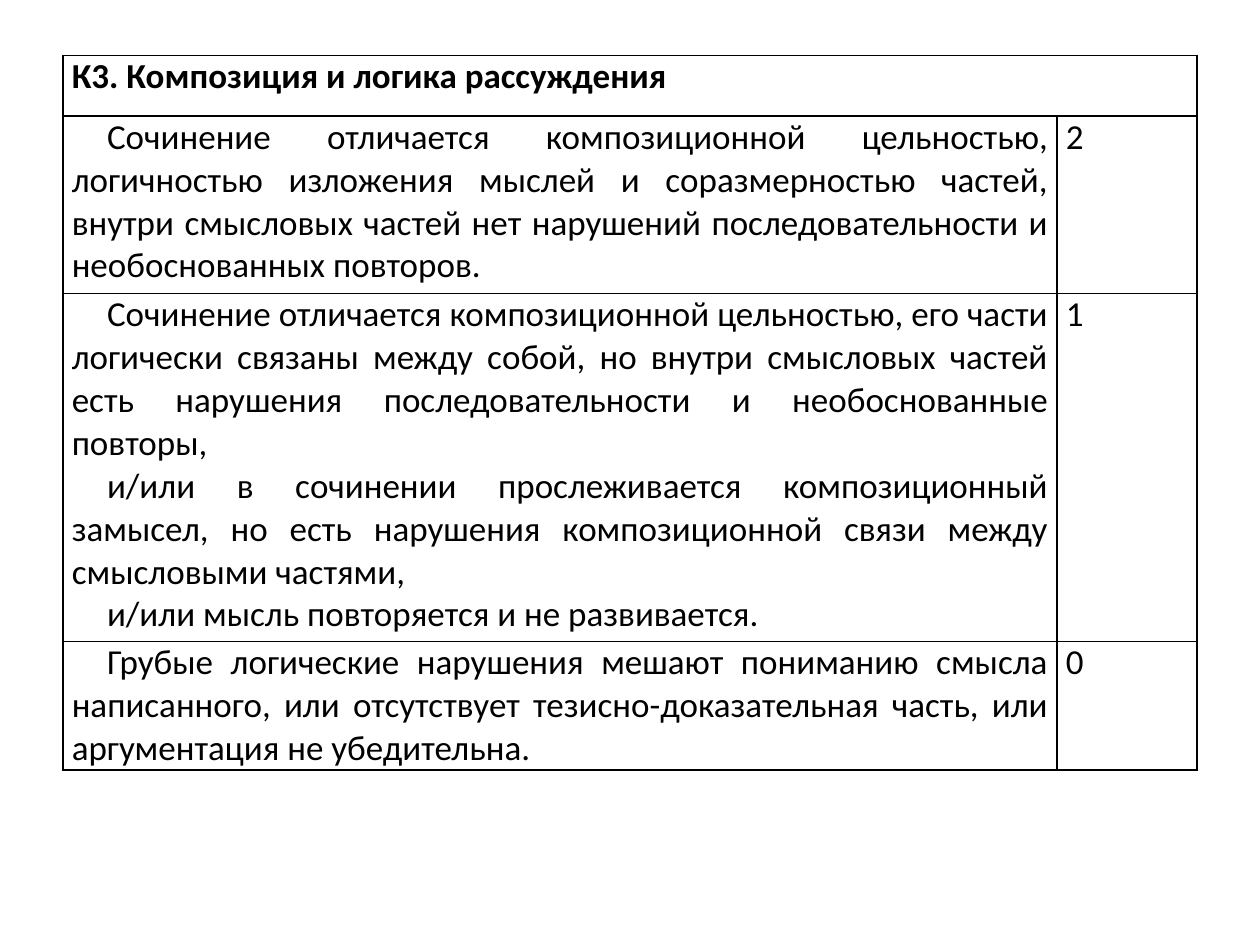
from pptx import Presentation, oxml
from pptx import util as u
from pptx.dml import color
from pptx.enum import text
from pptx.oxml import ns

TITLE = "К3. Композиция и логика рассуждения"
CRITERIA = [
    (["Сочинение отличается композиционной цельностью, логичностью изложения мыслей "
      "и соразмерностью частей, внутри смысловых частей нет нарушений "
      "последовательности и необоснованных повторов."], "2"),
    (["Сочинение отличается композиционной цельностью, его части логически связаны "
      "между собой, но внутри смысловых частей есть нарушения последовательности "
      "и необоснованные повторы,",
      "и/или в сочинении прослеживается композиционный замысел, но есть нарушения "
      "композиционной связи между смысловыми частями,",
      "и/или мысль повторяется и не развивается."], "1"),
    (["Грубые логические нарушения мешают пониманию смысла написанного, или "
      "отсутствует тезисно-доказательная часть, или аргументация не убедительна."], "0"),
]
LEFT, TOP = 0.5, 0.44
COLS = [7.89, 1.11]
ROWS = [0.48, 1.41, 2.76, 1.02]
INDENT = 0.28
BLACK = "000000"
FONT = {"name": "Calibri", "size": u.Pt(20)}
MARGINS = {"margin_left": u.Inches(0.07), "margin_right": u.Inches(0.07),
           "margin_top": 0, "margin_bottom": 0}


def rgb(value):
    """Return the colour for a hex string."""
    return color.RGBColor.from_string(value)


def set_format(obj, values):
    """Set each attribute in values on obj."""
    for name, value in values.items():
        setattr(obj, name, value)


def add_borders(cell):
    """Draw a one-point line on every side of a cell."""
    tc_pr = cell._tc.get_or_add_tcPr()
    for i, side in enumerate(("lnL", "lnR", "lnT", "lnB")):
        tc_pr.insert(i, oxml.parse_xml(
            f'<a:{side} {ns.nsdecls("a")} w="{u.Pt(1)}"><a:solidFill>'
            f'<a:srgbClr val="{BLACK}"/></a:solidFill></a:{side}>'))


def fill_cell(cell, paragraphs, bold=False, indent=0):
    """Write justified paragraphs into a cell."""
    tf = cell.text_frame
    for i, line in enumerate(paragraphs):
        p = tf.add_paragraph() if i else tf.paragraphs[0]
        p.alignment = text.PP_ALIGN.JUSTIFY
        if indent:
            p._p.get_or_add_pPr().set("indent", str(u.Inches(indent)))
        r = p.add_run()
        r.text = line
        set_format(r.font, {**FONT, "bold": bold})
        r.font.color.rgb = rgb(BLACK)


def main():
    """Build the slide with the criteria table."""
    prs = Presentation()
    set_format(prs, {"slide_width": u.Inches(10), "slide_height": u.Inches(7.5)})
    s = prs.slides.add_slide(prs.slide_layouts[6])
    box = [u.Inches(v) for v in (LEFT, TOP, sum(COLS), sum(ROWS))]
    table = s.shapes.add_table(len(ROWS), len(COLS), *box).table
    set_format(table, {"first_row": False, "horz_banding": False})
    for col, width in zip(table.columns, COLS):
        col.width = u.Inches(width)
    for row, height in zip(table.rows, ROWS):
        row.height = u.Inches(height)
    for cell in table.iter_cells():
        set_format(cell, MARGINS)
        cell.fill.background()
        add_borders(cell)

    table.cell(0, 0).merge(table.cell(0, 1))
    fill_cell(table.cell(0, 0), [TITLE], bold=True)
    for i, (paragraphs, score) in enumerate(CRITERIA, 1):
        fill_cell(table.cell(i, 0), paragraphs, indent=INDENT)
        fill_cell(table.cell(i, 1), [score])
    prs.save("out.pptx")


if __name__ == "__main__":
    main()
